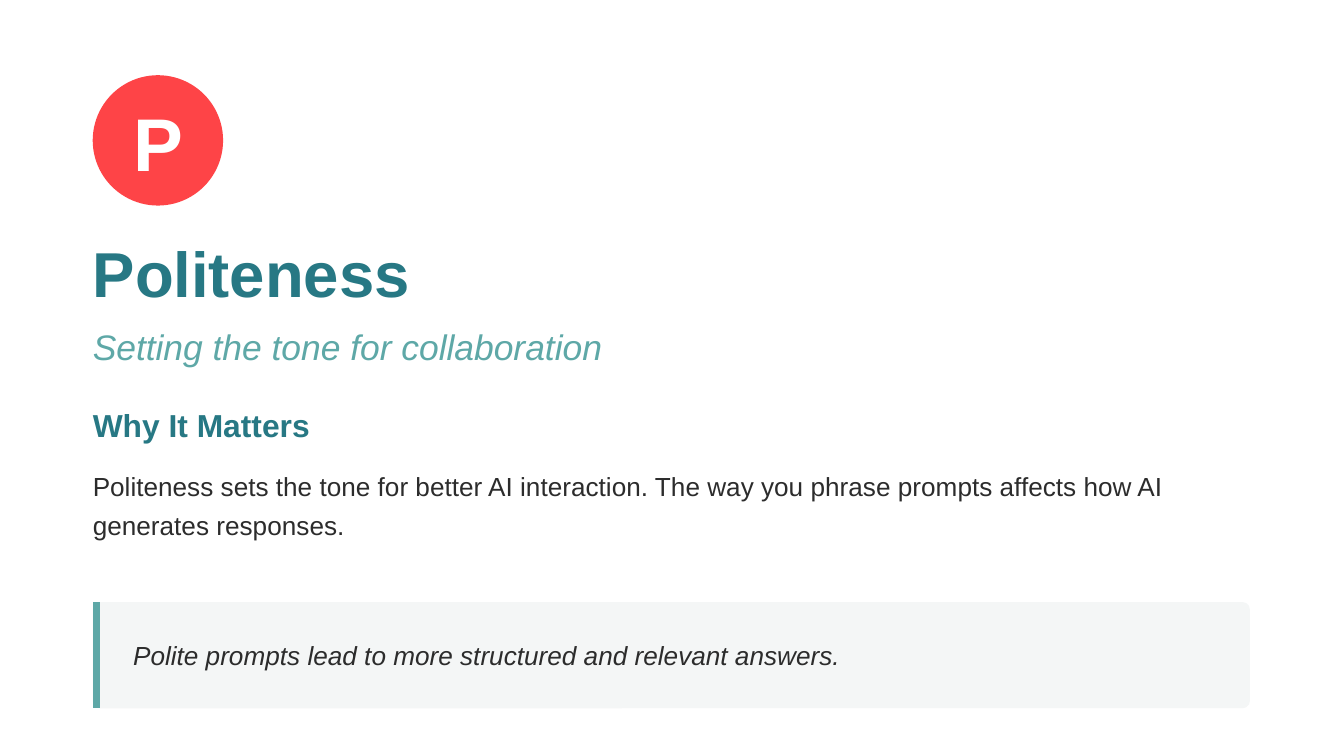
"""Builds a slide on politeness in prompts, with a letter badge and a callout."""
import pptx
import pptx.dml.color
import pptx.enum.shapes
import pptx.enum.text
import pptx.oxml.ns
import pptx.util
from lxml import etree

Inches, Pt = pptx.util.Inches, pptx.util.Pt
ALIGN, ANCHOR = pptx.enum.text.PP_ALIGN, pptx.enum.text.MSO_ANCHOR

CORAL, TEAL, AQUA = "FE4447", "277884", "5EA8A7"
INK, PALE, WHITE = "2C2C2C", "F4F6F6", "FFFFFF"
SLIDE_WIDTH = 10
SLIDE_HEIGHT = SLIDE_WIDTH * 9 / 16
LEFT, WIDTH, INDENT = 0.69, 8.78, 0.3
BADGE = (LEFT, 0.56, 0.97, 0.97)
CALLOUT = (LEFT, 4.48, 8.61, 0.79)
BAR_WIDTH = 3.75

TITLE = ("Politeness", 1.74, 0.54, dict(size=34, color=TEAL, bold=True))
BODY = [
    ("Setting the tone for collaboration", 2.42, 0.3,
     dict(size=19, color=AQUA, italic=True)),
    ("Why It Matters", 3.02, 0.28, dict(size=17, color=TEAL, bold=True)),
    ("Politeness sets the tone for better AI interaction. The way you phrase "
     "prompts affects how AI generates responses.", 3.44, 0.58,
     dict(size=14, color=INK, spacing=21)),
]
QUOTE = "Polite prompts lead to more structured and relevant answers."


def rgb(color):
    return pptx.dml.color.RGBColor.from_string(color)


def inches(box):
    return [Inches(v) for v in box]


def write(sp, text, size, color, bold=False, italic=False, spacing=None,
          align=ALIGN.LEFT, anchor=ANCHOR.TOP):
    tf = sp.text_frame
    tf.text = text
    tf.word_wrap = True
    tf.auto_size = pptx.enum.text.MSO_AUTO_SIZE.NONE
    tf.vertical_anchor = anchor
    tf.margin_left = tf.margin_right = tf.margin_top = tf.margin_bottom = 0
    p = tf.paragraphs[0]
    p.alignment = align
    if spacing:
        p.line_spacing = Pt(spacing)
    font = p.runs[0].font
    font.name, font.size = "Arial", Pt(size)
    font.bold, font.italic = bold, italic
    font.color.rgb = rgb(color)


def add_text(s, box, text, **style):
    write(s.shapes.add_textbox(*inches(box)), text, **style)


def add_panel(s, box, color, rounding):
    sp = s.shapes.add_shape(pptx.enum.shapes.MSO_SHAPE.ROUNDED_RECTANGLE, *inches(box))
    sp.adjustments[0] = rounding
    sp.shadow.inherit = False
    sp.fill.solid()
    sp.fill.fore_color.rgb = rgb(color)
    sp.line.fill.background()


def add_bar(s, x, top, bottom, color):
    line = s.shapes.add_connector(pptx.enum.shapes.MSO_CONNECTOR.STRAIGHT,
                                  *inches((x, top, x, bottom)))
    line.line.color.rgb = rgb(color)
    line.line.width = Pt(BAR_WIDTH)
    etree.SubElement(line.element.spPr, pptx.oxml.ns.qn("a:effectLst"))


def main():
    prs = pptx.Presentation()
    prs.slide_width, prs.slide_height = inches((SLIDE_WIDTH, SLIDE_HEIGHT))
    s = prs.slides.add_slide(prs.slide_layouts[5])
    s.background.fill.solid()
    s.background.fill.fore_color.rgb = rgb(WHITE)

    add_panel(s, BADGE, CORAL, 0.5)
    add_text(s, (LEFT + INDENT, 0.72, 0.38, 0.64), "P", size=40, color=WHITE,
             bold=True, align=ALIGN.CENTER)

    text, top, height, style = TITLE
    title = s.shapes.title
    title.left, title.top, title.width, title.height = inches((LEFT, top, WIDTH, height))
    write(title, text, **style)
    for text, top, height, style in BODY:
        add_text(s, (LEFT, top, WIDTH, height), text, **style)

    left, top, width, height = CALLOUT
    add_panel(s, CALLOUT, PALE, 0.07)
    add_bar(s, left + BAR_WIDTH / 72 / 2, top, top + height, AQUA)
    add_text(s, (left + INDENT, top, 8.22, height), QUOTE, size=14, color=INK,
             italic=True, anchor=ANCHOR.MIDDLE)
    prs.save("out.pptx")


if __name__ == "__main__":
    main()
